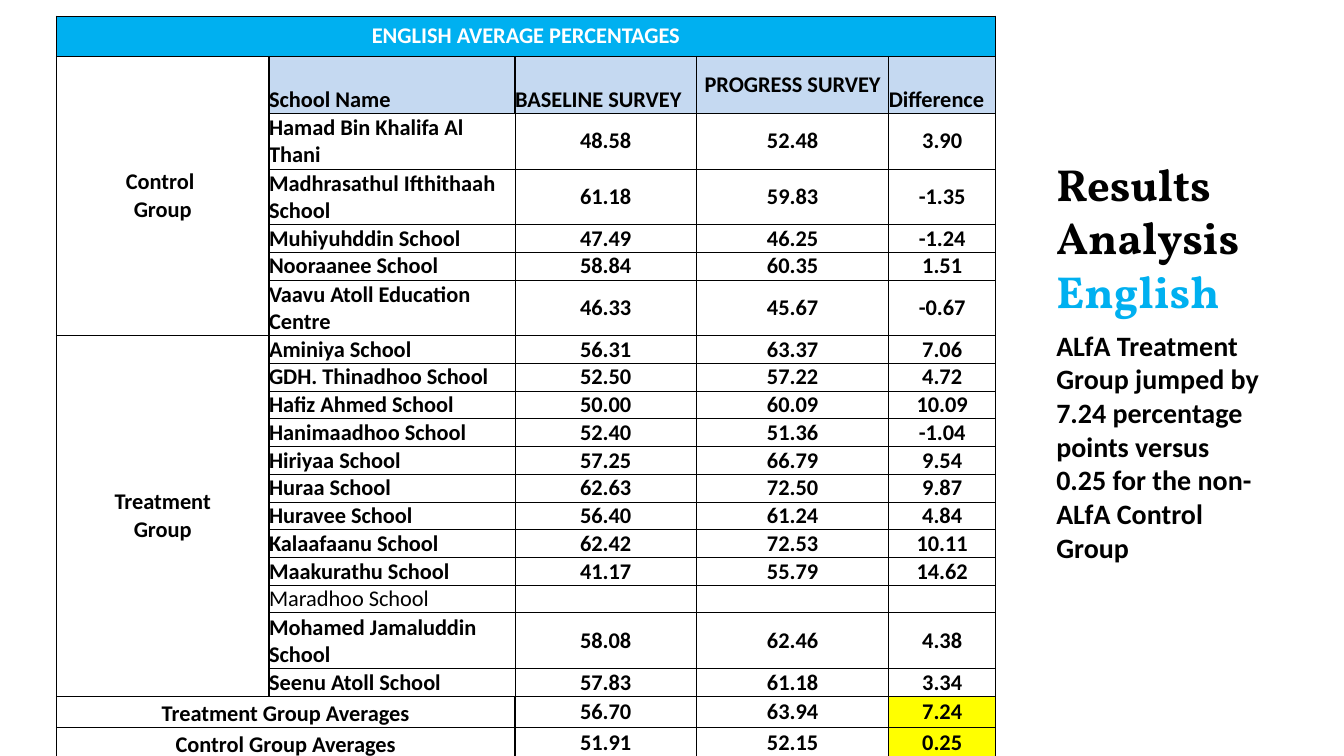
from dataclasses import dataclass

import lxml.etree
import pptx
import pptx.dml.color
import pptx.enum.text
import pptx.oxml.ns
import pptx.table
import pptx.text.text
import pptx.util
from pptx.util import Cm

ALIGN = pptx.enum.text.PP_ALIGN
ANCHOR = pptx.enum.text.MSO_ANCHOR


@dataclass(frozen=True)
class Theme:
    black: str = "000000"
    white: str = "FFFFFF"
    accent: str = "00B0F0"
    header: str = "C5D9F1"
    highlight: str = "FFFF00"
    body_font: str = "Calibri"
    title_font: str = "Vollkorn"
    table_size: int = 16
    message_size: int = 20
    title_size: int = 32
    thin: float = 0.75
    thick: float = 1


@dataclass(frozen=True)
class School:
    name: str
    scores: tuple[str, str, str] = ("", "", "")
    lines: int = 1


@dataclass(frozen=True)
class Group:
    label: str
    schools: tuple[School, ...]


@dataclass(frozen=True)
class Average:
    label: str
    scores: tuple[str, str, str]


@dataclass(frozen=True)
class CellStyle:
    fill: str = "FFFFFF"
    color: str = "000000"
    align: ALIGN = ALIGN.CENTER
    anchor: ANCHOR = ANCHOR.MIDDLE
    bold: bool = True
    border: float = 0.75
    bottom: float = 0.75


THEME = Theme()
TITLE = "ENGLISH AVERAGE PERCENTAGES"
HEADERS = ("School Name", "BASELINE SURVEY", "PROGRESS SURVEY", "Difference")
COLUMN_WIDTHS = (5.36, 6.2, 4.57, 4.85, 2.69)
TITLE_HEIGHT, HEADER_HEIGHT, LINE_HEIGHT, AVERAGE_HEIGHT = 1.01, 1.44, 0.7, 0.78
GROUPS = (
    Group("Control \nGroup", (
        School("Hamad Bin Khalifa Al Thani", ("48.58", "52.48", "3.90"), 2),
        School("Madhrasathul Ifthithaah School", ("61.18", "59.83", "-1.35"), 2),
        School("Muhiyuhddin School", ("47.49", "46.25", "-1.24")),
        School("Nooraanee School", ("58.84", "60.35", "1.51")),
        School("Vaavu Atoll Education Centre", ("46.33", "45.67", "-0.67"), 2),
    )),
    Group("Treatment\nGroup", (
        School("Aminiya School", ("56.31", "63.37", "7.06")),
        School("GDH. Thinadhoo School", ("52.50", "57.22", "4.72")),
        School("Hafiz Ahmed School", ("50.00", "60.09", "10.09")),
        School("Hanimaadhoo School", ("52.40", "51.36", "-1.04")),
        School("Hiriyaa School", ("57.25", "66.79", "9.54")),
        School("Huraa School", ("62.63", "72.50", "9.87")),
        School("Huravee School", ("56.40", "61.24", "4.84")),
        School("Kalaafaanu School", ("62.42", "72.53", "10.11")),
        School("Maakurathu School", ("41.17", "55.79", "14.62")),
        School("Maradhoo School"),
        School("Mohamed Jamaluddin School", ("58.08", "62.46", "4.38"), 2),
        School("Seenu Atoll School", ("57.83", "61.18", "3.34")),
    )),
)
AVERAGES = (
    Average("Treatment Group Averages", ("56.70", "63.94", "7.24")),
    Average("Control Group Averages", ("51.91", "52.15", "0.25")),
)


def rgb(color: str) -> pptx.dml.color.RGBColor:
    return pptx.dml.color.RGBColor.from_string(color)


def set_font(font: pptx.text.text.Font, name: str, size: int, color: str, bold: bool = True) -> None:
    font.name = name
    font.size = pptx.util.Pt(size)
    font.bold = bold
    font.color.rgb = rgb(color)


def set_borders(cell: pptx.table._Cell, style: CellStyle) -> None:
    qn = pptx.oxml.ns.qn
    properties = cell._tc.get_or_add_tcPr()
    for side in ("lnL", "lnR", "lnT", "lnB"):
        width = style.bottom if side == "lnB" else style.border
        line = lxml.etree.SubElement(properties, qn(f"a:{side}"), w=str(pptx.util.Pt(width)))
        fill = lxml.etree.SubElement(line, qn("a:solidFill"))
        lxml.etree.SubElement(fill, qn("a:srgbClr"), val=THEME.black)


def write_cell(cell: pptx.table._Cell, text: str, style: CellStyle) -> None:
    set_borders(cell, style)
    cell.fill.solid()
    cell.fill.fore_color.rgb = rgb(style.fill)
    cell.margin_left = cell.margin_right = cell.margin_top = cell.margin_bottom = 0
    cell.vertical_anchor = style.anchor
    paragraph = cell.text_frame.paragraphs[0]
    paragraph.alignment = style.align
    set_font(paragraph.font, THEME.body_font, THEME.table_size, style.color, style.bold)
    if text:
        paragraph.text = text
    else:
        size = str(THEME.table_size * 100)
        lxml.etree.SubElement(paragraph._p, pptx.oxml.ns.qn("a:endParaRPr"), sz=size)


def write_merged(table: pptx.table.Table, first: tuple[int, int], last: tuple[int, int],
                 text: str, style: CellStyle) -> None:
    table.cell(*first).merge(table.cell(*last))
    for row in range(first[0], last[0] + 1):
        for column in range(first[1], last[1] + 1):
            write_cell(table.cell(row, column), text if (row, column) == first else "", style)


def write_header(table: pptx.table.Table) -> None:
    title_style = CellStyle(THEME.accent, THEME.white, border=THEME.thick, bottom=THEME.thick)
    write_merged(table, (0, 0), (0, 4), TITLE, title_style)
    low = CellStyle(THEME.header, align=ALIGN.LEFT, anchor=ANCHOR.BOTTOM, border=THEME.thick)
    centred = CellStyle(THEME.header, border=THEME.thick)
    for column, text in enumerate(HEADERS, 1):
        write_cell(table.cell(1, column), text, centred if column == 3 else low)


def write_groups(table: pptx.table.Table) -> None:
    label_style = CellStyle(border=THEME.thick, bottom=THEME.thick)
    top, row = 1, 2
    for group in GROUPS:
        for school in group.schools:
            name_style = CellStyle(align=ALIGN.LEFT, anchor=ANCHOR.BOTTOM, bold=any(school.scores))
            write_cell(table.cell(row, 1), school.name, name_style)
            for column, score in enumerate(school.scores, 2):
                write_cell(table.cell(row, column), score, CellStyle())
            row += 1
        write_merged(table, (top, 0), (row - 1, 0), group.label, label_style)
        top = row


def write_averages(table: pptx.table.Table, first_row: int) -> None:
    label_style = CellStyle(anchor=ANCHOR.BOTTOM, border=THEME.thick, bottom=THEME.thick)
    for row, average in enumerate(AVERAGES, first_row):
        write_merged(table, (row, 0), (row, 1), average.label, label_style)
        for column, score in enumerate(average.scores, 2):
            fill = THEME.highlight if column == 4 else THEME.white
            style = CellStyle(fill, border=THEME.thick, bottom=THEME.thick)
            write_cell(table.cell(row, column), score, style)


def add_score_table(slide: pptx.slide.Slide) -> None:
    school_heights = [LINE_HEIGHT * school.lines for group in GROUPS for school in group.schools]
    heights = [TITLE_HEIGHT, HEADER_HEIGHT, *school_heights, *[AVERAGE_HEIGHT] * len(AVERAGES)]
    table = slide.shapes.add_table(len(heights), len(COLUMN_WIDTHS), Cm(1.42), Cm(0.41),
                                   Cm(sum(COLUMN_WIDTHS)), Cm(sum(heights))).table
    table.first_row = table.horz_banding = False
    for column, width in zip(table.columns, COLUMN_WIDTHS):
        column.width = Cm(width)
    for row, height in zip(table.rows, heights):
        row.height = Cm(height)
    write_header(table)
    write_groups(table)
    write_averages(table, len(heights) - len(AVERAGES))


def add_title(slide: pptx.slide.Slide) -> None:
    title = slide.shapes.title
    title.left, title.top, title.width, title.height = Cm(26.37), Cm(3.81), Cm(7.8), Cm(4.37)
    frame = title.text_frame
    frame.word_wrap = True
    frame.auto_size = pptx.enum.text.MSO_AUTO_SIZE.NONE
    frame.vertical_anchor = ANCHOR.TOP
    paragraph = frame.paragraphs[0]
    paragraph.alignment = ALIGN.LEFT
    for text, color in (("Results Analysis ", THEME.black), ("English", THEME.accent)):
        run = paragraph.add_run()
        run.text = text
        set_font(run.font, THEME.title_font, THEME.title_size, color)


def add_message(slide: pptx.slide.Slide) -> None:
    frame = slide.shapes.add_textbox(Cm(26.37), Cm(8.15), Cm(5.64), Cm(6.25)).text_frame
    frame.word_wrap = True
    paragraph = frame.paragraphs[0]
    paragraph.text = ("ALfA Treatment Group jumped by 7.24 percentage points "
                      "versus 0.25 for the non-ALfA Control Group")
    set_font(paragraph.font, THEME.body_font, THEME.message_size, THEME.black)


def main() -> None:
    presentation = pptx.Presentation()
    presentation.slide_width, presentation.slide_height = Cm(33.87), Cm(19.05)
    slide = presentation.slides.add_slide(presentation.slide_layouts[5])
    add_score_table(slide)
    add_title(slide)
    add_message(slide)
    presentation.save("out.pptx")


if __name__ == "__main__":
    main()
